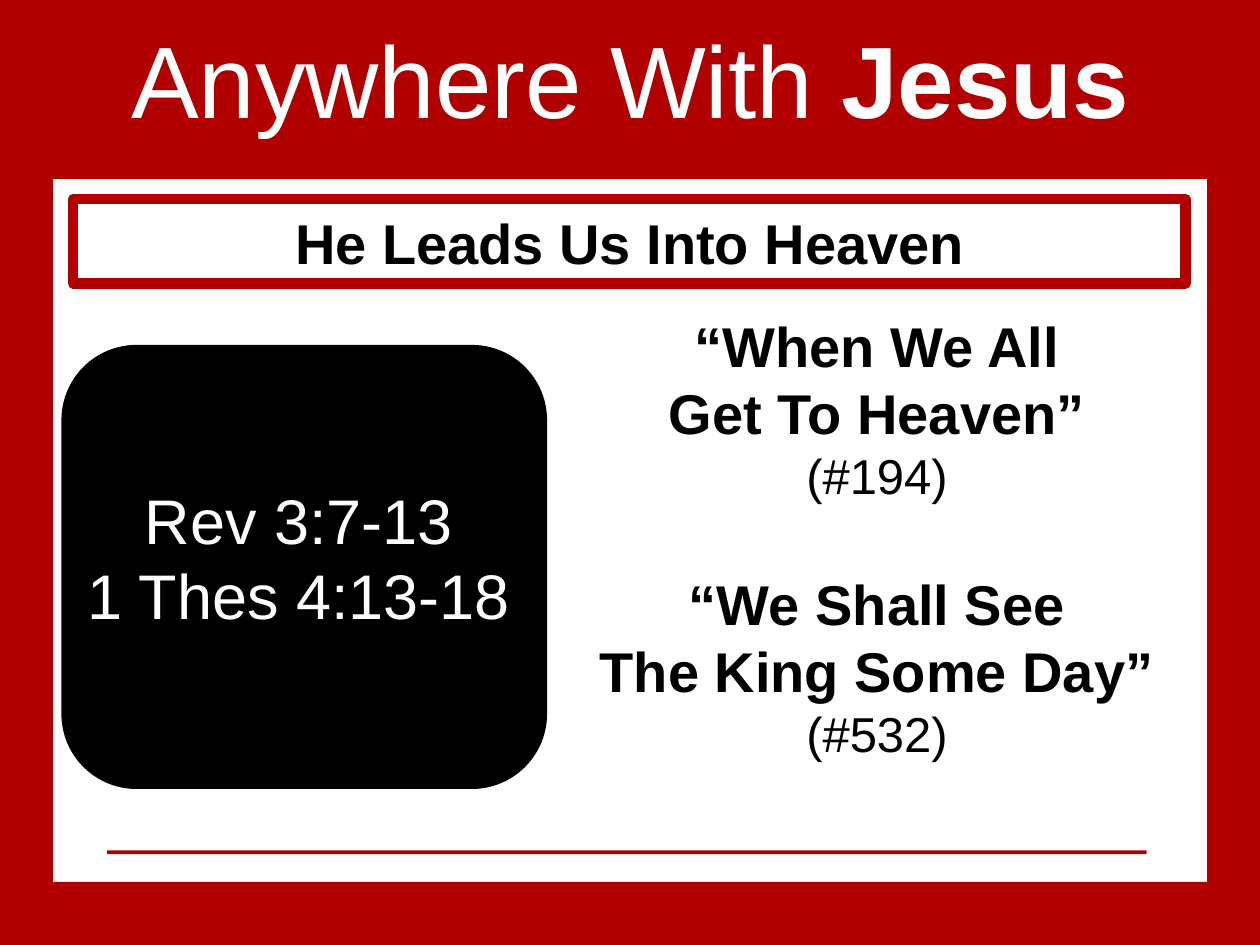
import pptx
import pptx.util
import pptx.dml.color
import pptx.enum.shapes
import pptx.enum.text
import pptx.oxml.ns
from lxml import etree

Inches, Pt = pptx.util.Inches, pptx.util.Pt
RGBColor = pptx.dml.color.RGBColor
SHAPE = pptx.enum.shapes.MSO_SHAPE
ANCHOR = pptx.enum.text.MSO_ANCHOR
ALIGN = pptx.enum.text.PP_ALIGN

RED = RGBColor(0xB0, 0x00, 0x00)
RULE_RED = RGBColor(0xAD, 0x01, 0x01)
BLACK = RGBColor(0, 0, 0)
WHITE = RGBColor(0xFF, 0xFF, 0xFF)

WIDTH, HEIGHT = 10, 7.5
SIDE, HEADER, FOOTER = 0.42, 1.42, 0.5


def add_box(slide, box, fill=None, line=None, weight=0, kind=SHAPE.RECTANGLE):
    sp = slide.shapes.add_shape(kind, *map(Inches, box))
    sp.shadow.inherit = False
    if fill is None:
        sp.fill.background()
    else:
        sp.fill.solid()
        sp.fill.fore_color.rgb = fill
    if line is None:
        sp.line.fill.background()
    else:
        sp.line.color.rgb = line
        sp.line.width = Pt(weight)
    return sp


def add_text(slide, box, paragraphs, color, anchor=ANCHOR.TOP):
    """Add centred text; each paragraph is a list of (text, size, bold) runs."""
    tf = slide.shapes.add_textbox(*map(Inches, box)).text_frame
    tf.word_wrap = True
    tf.vertical_anchor = anchor
    for i, runs in enumerate(paragraphs):
        p = tf.add_paragraph() if i else tf.paragraphs[0]
        p.alignment = ALIGN.CENTER
        for text, size, bold in runs:
            for j, part in enumerate(text.split("\n")):
                if j:
                    p.add_line_break()
                r = p.add_run()
                r.text = part
                r.font.name = "Arial"
                r.font.size = Pt(size)
                r.font.bold = bold
                r.font.color.rgb = color
    return tf


def add_frame(slide):
    for box in (
        (0, 0, SIDE, HEIGHT),
        (WIDTH - SIDE, 0, SIDE, HEIGHT),
        (0, HEIGHT - FOOTER, WIDTH, FOOTER),
        (0, 0, WIDTH, HEADER),
    ):
        add_box(slide, box, fill=RED)
    add_box(slide, (0.85, 6.75, 8.25, 0.03), fill=RULE_RED)


def add_title(slide, box):
    runs = [("Anywhere With ", 58, False), ("Jesus", 58, True)]
    tf = add_text(slide, box, [runs], WHITE, ANCHOR.BOTTOM)
    tf.paragraphs[0].line_spacing = 0.9


def add_heading(slide, box):
    left, top, width, height = box
    sp = add_box(slide, box, line=RED, weight=6)
    etree.SubElement(sp.line._get_or_add_ln(), pptx.oxml.ns.qn("a:round"))
    add_text(slide, (left + 0.09, top + 0.03, width - 0.17, height - 0.03),
             [[("He Leads Us Into Heaven", 32, True)]], BLACK)


def add_scriptures(slide, box):
    left, top, width, _ = box
    add_box(slide, box, BLACK, BLACK, 1.75, SHAPE.ROUNDED_RECTANGLE)
    verses = ("Rev 3:7-13", "1 Thes 4:13-18")
    add_text(slide, (left + 0.08, top + 1.02, width - 0.25, 1.31),
             [[(verse, 36, False)] for verse in verses], WHITE)


def add_hymns(slide, box):
    hymns = (
        ("“When We All\nGet To Heaven”", "(#194)"),
        ("“We Shall See\nThe King Some Day”", "(#532)"),
    )
    paragraphs = []
    for name, number in hymns:
        paragraphs += [[(name, 32, True)], [(number, 28, False)]]
    tf = add_text(slide, box, paragraphs, BLACK)
    tf.paragraphs[2].space_before = Pt(37)


def main():
    prs = pptx.Presentation()
    prs.slide_width, prs.slide_height = Inches(WIDTH), Inches(HEIGHT)
    slide = prs.slides.add_slide(prs.slide_layouts[6])
    add_frame(slide)
    add_title(slide, (0, 0.11, WIDTH, 1.05))
    add_heading(slide, (0.58, 1.58, 8.83, 0.67))
    add_scriptures(slide, (0.5, 2.75, 3.83, 3.5))
    add_hymns(slide, (4.25, 2.42, 5.42, 3.74))
    prs.save("out.pptx")


if __name__ == "__main__":
    main()
